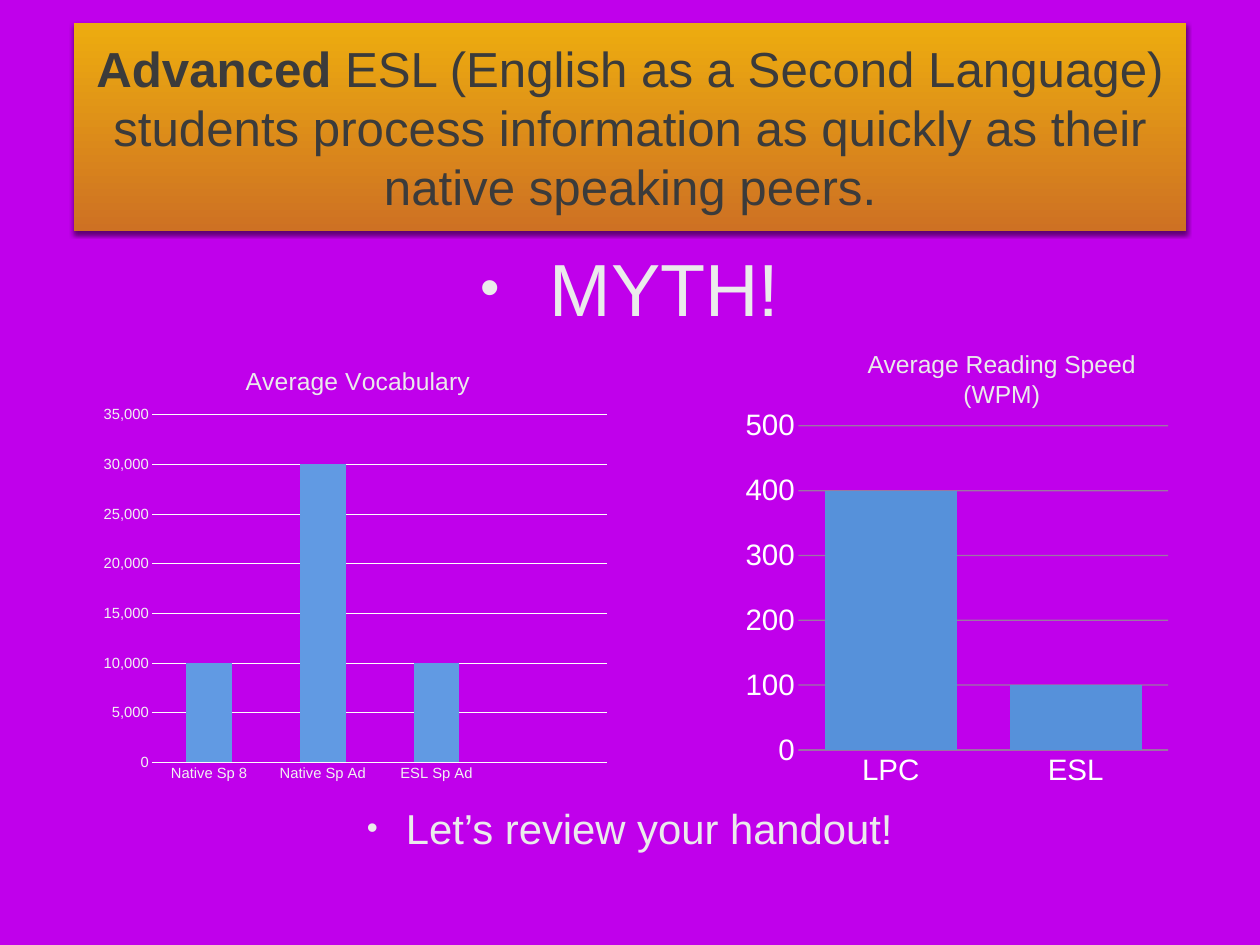
from dataclasses import dataclass

from lxml.etree import SubElement
from pptx import Presentation
from pptx.chart.data import CategoryChartData
from pptx.dml.color import RGBColor
from pptx.enum.chart import XL_CHART_TYPE, XL_TICK_MARK
from pptx.enum.text import MSO_ANCHOR, MSO_AUTO_SIZE, PP_ALIGN
from pptx.oxml.ns import qn
from pptx.util import Inches, Pt


@dataclass(frozen=True)
class Theme:
    font: str = "Arial"
    background: str = "C000EB"
    banner_top: str = "EDAC0F"
    banner_bottom: str = "CE7123"
    shadow: str = "000000"
    dark: str = "3B3B3B"
    light: str = "EBEBEB"
    title_size: int = 40
    verdict_size: int = 60
    closing_size: int = 34
    caption_size: int = 20


@dataclass(frozen=True)
class ChartStyle:
    kind: XL_CHART_TYPE
    bar: str
    text: str
    text_size: int
    line: str
    line_width: float
    line_opacity: int
    gap: int
    overlap: int
    maximum: int
    step: int
    number_format: str
    plot: tuple


THEME = Theme()
VOCABULARY = ChartStyle(
    XL_CHART_TYPE.COLUMN_STACKED, "619AE3", "F2F2F2", 12, "FCFCFC", 0.75, 100,
    150, 100, 35000, 5000, "#,##0", (0.11, 0.16, 0.87, 0.78))
READING = ChartStyle(
    XL_CHART_TYPE.COLUMN_CLUSTERED, "5691DA", "FFFFFF", 24, "939392", 1, 80,
    40, -10, 500, 100, "General", (0.14, 0.07, 0.86, 0.83))


def color(value):
    return RGBColor.from_string(value)


def format_font(font, size, value):
    font.name = THEME.font
    font.size = Pt(size)
    font.color.rgb = color(value)


def place(shape, box):
    shape.left, shape.top, shape.width, shape.height = map(Inches, box)


def prepare_frame(frame, inset):
    frame.word_wrap = True
    frame.auto_size = MSO_AUTO_SIZE.NONE
    frame.vertical_anchor = MSO_ANCHOR.MIDDLE
    frame.margin_left = frame.margin_right = Inches(inset)
    frame.margin_top = frame.margin_bottom = Inches(inset)


def add_shadow(shape):
    effects = SubElement(shape.element.spPr, qn("a:effectLst"))
    shadow = SubElement(
        effects, qn("a:outerShdw"), blurRad=str(Pt(4)), dist=str(Pt(2)),
        dir="5400000", rotWithShape="0")
    tint = SubElement(shadow, qn("a:srgbClr"), val=THEME.shadow)
    SubElement(tint, qn("a:alpha"), val="50000")


def build_banner(slide, box):
    title = slide.shapes.title
    place(title, box)
    title.fill.gradient()
    title.fill.gradient_angle = 270
    for stop, value in zip(title.fill.gradient_stops,
                           (THEME.banner_top, THEME.banner_bottom)):
        stop.color.rgb = color(value)
    add_shadow(title)
    prepare_frame(title.text_frame, 0)
    para = title.text_frame.paragraphs[0]
    para.alignment = PP_ALIGN.CENTER
    for text, bold in (
            ("Advanced", True),
            (" ESL (English as a Second Language) students process information "
             "as quickly as their native speaking peers.", False)):
        span = para.add_run()
        span.text = text
        format_font(span.font, THEME.title_size, THEME.dark)
        span.font.bold = bold


def add_centered_text(slide, box, text, size, inset=0, indent=None):
    """Add one centred line, with a hanging bullet when an indent is given."""
    frame = slide.shapes.add_textbox(*map(Inches, box)).text_frame
    prepare_frame(frame, inset)
    para = frame.paragraphs[0]
    para.text = text
    para.alignment = PP_ALIGN.CENTER
    if indent:
        properties = para._p.get_or_add_pPr()
        properties.set("marL", str(Inches(indent)))
        properties.set("indent", str(-Inches(indent)))
        SubElement(properties, qn("a:buSzPct"), val="75000")
        SubElement(properties, qn("a:buFont"), typeface=THEME.font)
        SubElement(properties, qn("a:buChar"), char="•")
    format_font(para.runs[0].font, size, THEME.light)


def set_layout(parent, **values):
    """Fix the place of a chart part, in fractions of the chart area."""
    for layout in parent.findall(qn("c:layout")):
        parent.remove(layout)
    layout = SubElement(parent, qn("c:layout"))
    manual = SubElement(layout, qn("c:manualLayout"))
    for name, value in values.items():
        SubElement(manual, qn(f"c:{name}"), val=str(value))
    return layout


def style_line(line, style):
    line.color.rgb = color(style.line)
    line.width = Pt(style.line_width)


def style_axes(chart, style):
    category_axis, value_axis = chart.category_axis, chart.value_axis
    value_axis.minimum_scale = 0
    value_axis.maximum_scale = style.maximum
    value_axis.major_unit = style.step
    value_axis.tick_labels.number_format = style.number_format
    value_axis.tick_labels.number_format_is_linked = False
    value_axis.format.line.fill.background()
    style_line(value_axis.major_gridlines.format.line, style)
    style_line(category_axis.format.line, style)
    for axis in (category_axis, value_axis):
        axis.major_tick_mark = axis.minor_tick_mark = XL_TICK_MARK.NONE
        format_font(axis.tick_labels.font, style.text_size, style.text)
        for line in axis._element.iter(qn("a:ln")):
            for tint in line.iter(qn("a:srgbClr")):
                SubElement(tint, qn("a:alpha"),
                           val=str(style.line_opacity * 1000))


def add_column_chart(slide, box, style, name, categories, values, title=None):
    data = CategoryChartData(number_format=style.number_format)
    data.categories = categories
    data.add_series(name, values)
    chart = slide.shapes.add_chart(style.kind, *map(Inches, box), data).chart
    format_font(chart.font, 10, THEME.light)
    chart.has_legend = False
    chart.has_title = title is not None
    if title:
        frame = chart.chart_title.text_frame
        frame.text = title
        span = frame.paragraphs[0].runs[0]
        format_font(span.font, THEME.caption_size, THEME.light)
        span.font.bold = False
        heading = chart.chart_title._element
        layout = set_layout(heading, xMode="edge", yMode="edge", x=0.28, y=0.04)
        heading.find(qn("c:tx")).addnext(layout)
    plot = chart.plots[0]
    plot.gap_width, plot.overlap = style.gap, style.overlap
    plot.vary_by_categories = False
    fill = plot.series[0].format.fill
    fill.solid()
    fill.fore_color.rgb = color(style.bar)
    style_axes(chart, style)
    area = chart._chartSpace.chart.plotArea
    x, y, width, height = style.plot
    area.insert(0, set_layout(area, layoutTarget="inner", xMode="edge",
                              yMode="edge", x=x, y=y, w=width, h=height))


def build_myth_slide(deck):
    slide = deck.slides.add_slide(deck.slide_layouts[5])
    slide.background.fill.solid()
    slide.background.fill.fore_color.rgb = color(THEME.background)
    left, width = 0.83, 12.56
    build_banner(slide, (left, 0.26, width, 2.35))
    add_centered_text(slide, (left, 2.74, width, 1), "MYTH!",
                      THEME.verdict_size, indent=0.78)
    add_column_chart(slide, (8.33, 4.5, 4.86, 4.41), READING, "WPM",
                     ("LPC", "ESL"), (400, 100))
    add_column_chart(slide, (1.07, 3.88, 5.9, 5.03), VOCABULARY, "Series 1",
                     ("Native Sp 8", "Native Sp Ad", "ESL Sp Ad", ""),
                     (10000, 30000, 10000, None), "Average Vocabulary")
    add_centered_text(slide, (9.71, 3.88, 3.19, 0.79),
                      "Average Reading Speed (WPM)", THEME.caption_size, 0.06)
    add_centered_text(slide, (left, 9, width, 0.7), "Let’s review your handout!",
                      THEME.closing_size, indent=0.44)


def main():
    deck = Presentation()
    deck.slide_width, deck.slide_height = Inches(14.22), Inches(10.67)
    build_myth_slide(deck)
    deck.save("out.pptx")


if __name__ == "__main__":
    main()
